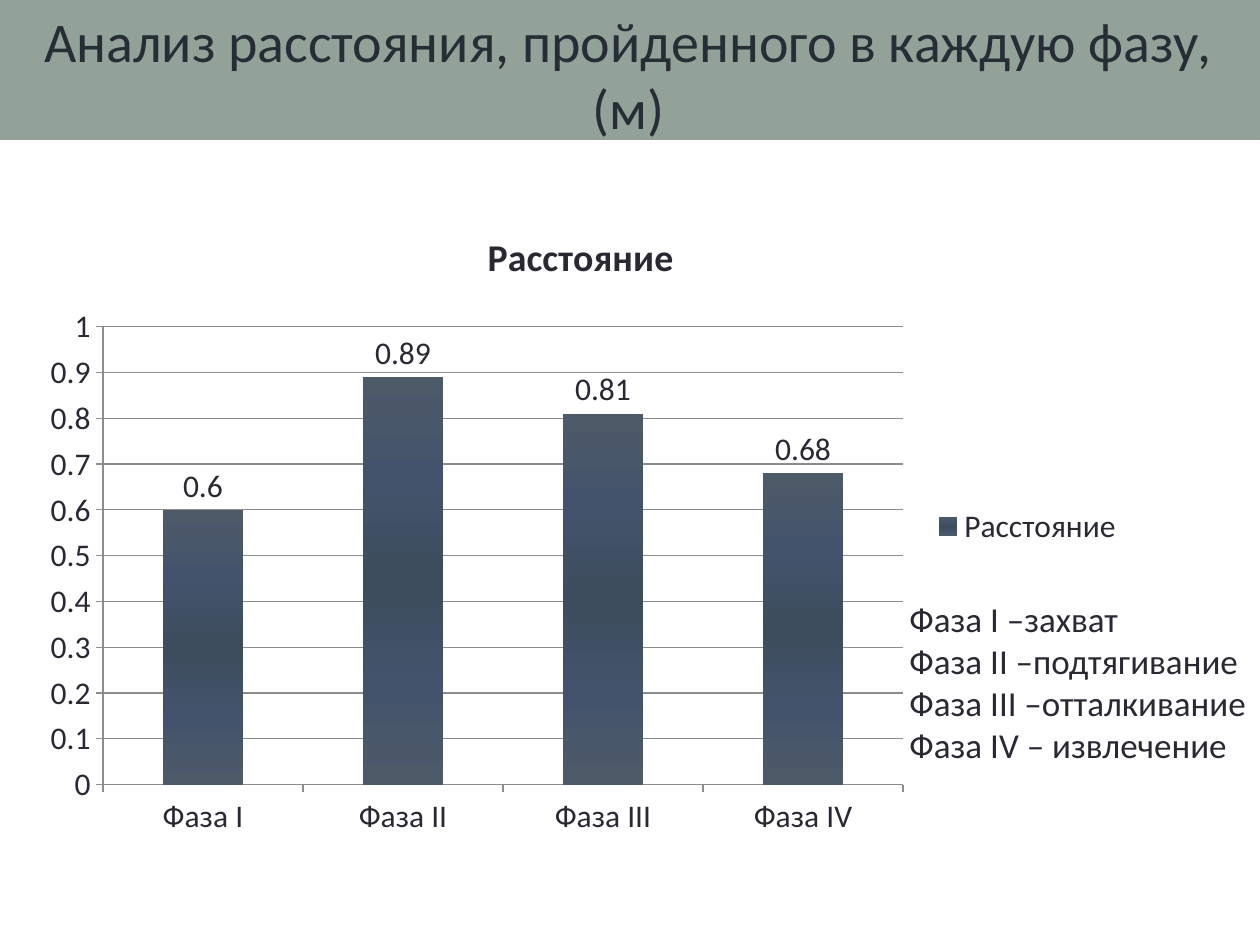
from dataclasses import dataclass

from lxml import etree
from pptx import Presentation
from pptx.chart.data import CategoryChartData
from pptx.dml.color import RGBColor
from pptx.enum.chart import XL_CHART_TYPE as ChartType
from pptx.enum.chart import XL_LABEL_POSITION as LabelPosition
from pptx.enum.chart import XL_LEGEND_POSITION as LegendPosition
from pptx.enum.chart import XL_TICK_MARK as TickMark
from pptx.enum.shapes import MSO_SHAPE as Shape
from pptx.enum.text import MSO_ANCHOR as Anchor
from pptx.enum.text import MSO_AUTO_SIZE as AutoSize
from pptx.enum.text import PP_ALIGN as Align
from pptx.oxml.ns import qn
from pptx.util import Inches, Pt


@dataclass(frozen=True)
class Theme:
    font: str = "Calibri"
    band: str = "93A299"
    heading: str = "262D35"
    text: str = "292934"
    grid: str = "8C8C8C"
    bar_stops: tuple = ("4D5A68", "43536B", "3D4D5D", "43536B", "4D5A68")
    heading_size: float = 32
    chart_title_size: float = 21.6
    chart_size: float = 18
    phase_size: float = 20


class SlideBuilder:
    def __init__(self, page, theme):
        self.page = page
        self.theme = theme

    def style(self, font, size, color):
        font.name = self.theme.font
        font.size = Pt(size)
        font.color.rgb = RGBColor.from_string(color)

    def band(self, left, top, width, height):
        box = self.page.shapes.add_shape(
            Shape.RECTANGLE, Inches(left), Inches(top), Inches(width), Inches(height)
        )
        box.shadow.inherit = False
        box.fill.solid()
        box.fill.fore_color.rgb = RGBColor.from_string(self.theme.band)
        box.line.fill.background()
        return box

    def title(self, text, left, top, width, height, behind):
        box = self.page.shapes.title
        behind.element.addnext(box.element)
        box.left, box.top = Inches(left), Inches(top)
        box.width, box.height = Inches(width), Inches(height)
        frame = box.text_frame
        frame.text = text
        frame.word_wrap = True
        frame.auto_size = AutoSize.NONE
        frame.vertical_anchor = Anchor.TOP
        para = frame.paragraphs[0]
        para.alignment = Align.CENTER
        self.style(para.runs[0].font, self.theme.heading_size, self.theme.heading)

    def phase_list(self, lines, left, top, width, height):
        box = self.page.shapes.add_textbox(
            Inches(left), Inches(top), Inches(width), Inches(height)
        )
        frame = box.text_frame
        frame.word_wrap = True
        frame.margin_right = 0
        frame.text = "\n".join(lines)
        for para in frame.paragraphs:
            self.style(para.runs[0].font, self.theme.phase_size, self.theme.text)

    def column_chart(self, name, values, left, top, width, height, plot_area):
        data = CategoryChartData()
        data.categories = list(values)
        data.add_series(name, list(values.values()))
        chart = self.page.shapes.add_chart(
            ChartType.COLUMN_CLUSTERED,
            Inches(left), Inches(top), Inches(width), Inches(height), data,
        ).chart
        theme = self.theme
        self.style(chart.font, theme.chart_size, theme.text)

        chart.has_title = True
        chart.chart_title.text_frame.text = name
        title_font = chart.chart_title.text_frame.paragraphs[0].runs[0].font
        self.style(title_font, theme.chart_title_size, theme.text)
        title_font.bold = True

        chart.has_legend = True
        chart.legend.position = LegendPosition.RIGHT
        chart.legend.include_in_layout = False

        gray = RGBColor.from_string(theme.grid)
        value_axis = chart.value_axis
        value_axis.minimum_scale, value_axis.maximum_scale = 0, 1
        value_axis.major_unit = 0.1
        value_axis.has_major_gridlines = True
        value_axis.major_gridlines.format.line.color.rgb = gray
        for axis in (chart.category_axis, value_axis):
            axis.major_tick_mark = TickMark.OUTSIDE
            axis.format.line.color.rgb = gray

        plot = chart.plots[0]
        plot.gap_width = 150
        plot.vary_by_categories = False
        plot.has_data_labels = True
        labels = plot.data_labels
        labels.show_value = True
        labels.position = LabelPosition.OUTSIDE_END
        self.style(labels.font, theme.chart_size, theme.text)
        self.shade_bars(chart)
        self.place_plot(chart, plot_area)

    def shade_bars(self, chart):
        fill = chart.plots[0].series[0].format.fill
        fill.gradient()
        fill.gradient_angle = 90
        stop_list = chart.element.find(".//" + qn("a:gsLst"))
        for old in list(stop_list):
            stop_list.remove(old)
        colors = self.theme.bar_stops
        for index, color in enumerate(colors):
            stop = etree.SubElement(stop_list, qn("a:gs"))
            stop.set("pos", str(index * 100000 // (len(colors) - 1)))
            etree.SubElement(stop, qn("a:srgbClr")).set("val", color)

    def place_plot(self, chart, plot_area):
        area = chart.element.find(".//" + qn("c:plotArea"))
        for old in area.findall(qn("c:layout")):
            area.remove(old)
        layout = etree.Element(qn("c:layout"))
        manual = etree.SubElement(layout, qn("c:manualLayout"))
        settings = {"layoutTarget": "inner", "xMode": "edge", "yMode": "edge"}
        settings.update(zip("xywh", plot_area))
        for tag, value in settings.items():
            etree.SubElement(manual, qn(f"c:{tag}")).set("val", str(value))
        area.insert(0, layout)


def main():
    deck = Presentation()
    deck.slide_width, deck.slide_height = Inches(10), Inches(7.5)
    page = deck.slides.add_slide(deck.slide_layouts[5])
    builder = SlideBuilder(page, Theme())

    builder.band(0, 0, 10, 0.4)
    title_band = builder.band(-0.01, 0.32, 10.04, 0.79)
    builder.title(
        "Анализ расстояния, пройденного в каждую фазу, (м)",
        0.09, 0, 9.8, 1.18, behind=title_band,
    )
    distances = {"Фаза I": 0.6, "Фаза II": 0.89, "Фаза III": 0.81, "Фаза IV": 0.68}
    builder.column_chart(
        "Расстояние", distances, 0.2, 1.62, 8.82, 5.12,
        plot_area=(0.07, 0.19, 0.72, 0.71),
    )
    builder.phase_list(
        ["Фаза I –захват", "Фаза II –подтягивание",
         "Фаза III –отталкивание", "Фаза IV – извлечение"],
        7.12, 4.69, 2.87, 1.45,
    )
    deck.save("out.pptx")


if __name__ == "__main__":
    main()
